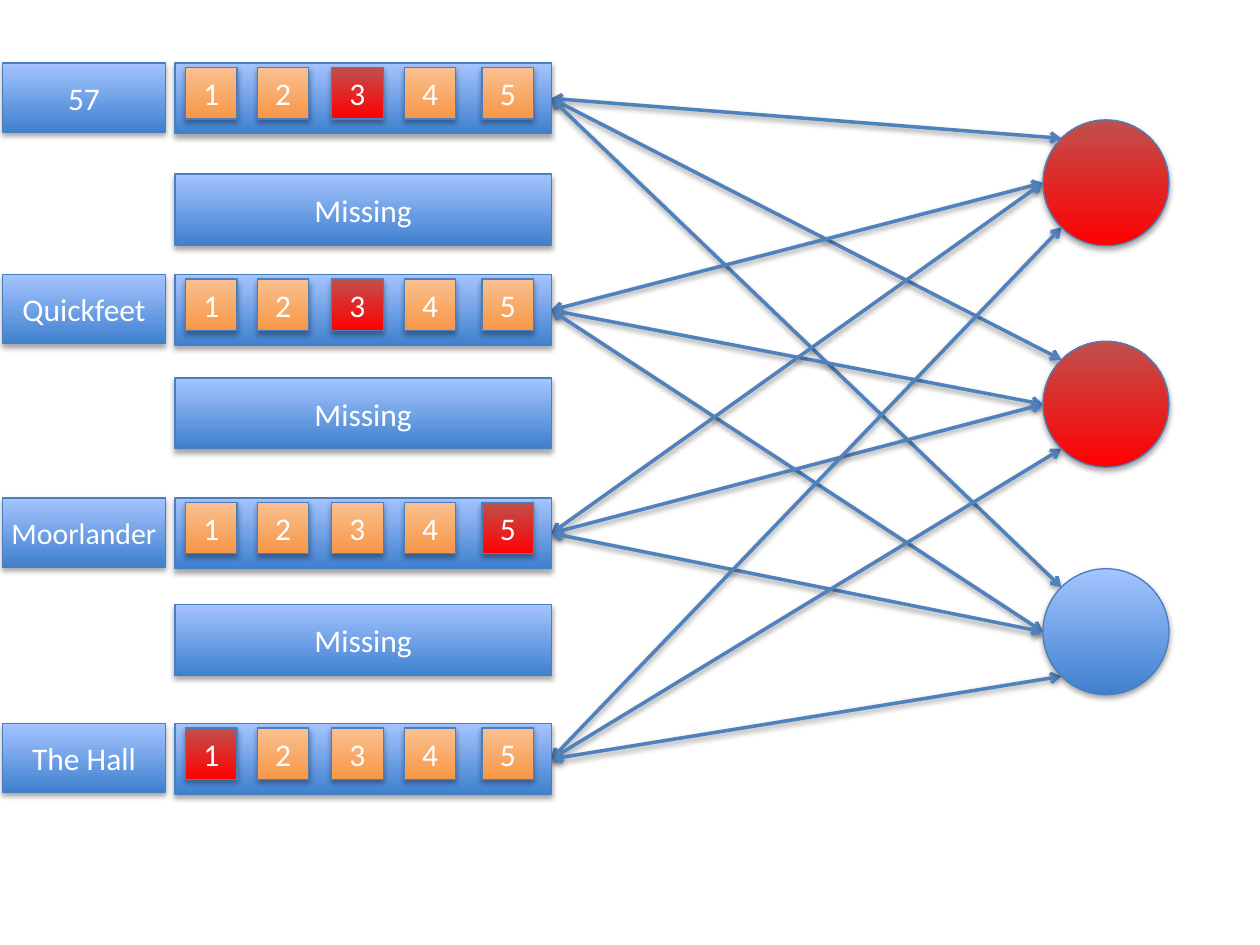
import math

import pptx
import pptx.dml.color
import pptx.enum.shapes
import pptx.enum.text
import pptx.oxml.ns
import pptx.util
from lxml import etree

Pt = pptx.util.Pt
KIND = pptx.enum.shapes.MSO_SHAPE
HEX = {"edge": "4B7EBC", "wire": "4F81BD", "text": "FFFFFF", "shade": "000000"}
FILLS = {
    "blue": ("3F80CE", "A4C4FF"),
    "orange": ("F79646", "FAC090"),
    "red": ("FF0000", "C0504D"),
}
FILMS = [
    ("57", 36, 3, 18),
    ("Quickfeet", 157, 3, 18),
    ("Moorlander", 284.5, 5, 17),
    ("The Hall", 413.5, 1, 18),
]
GAPS = [99.5, 216, 345.5]
NODES = [(68.5, "red"), (195, "red"), (325, "blue")]
TILES = [6, 47, 89.5, 131, 175.5]
ANGLES = [-45, 0, 0, 45]


def rgb(code):
    """Turn a hex string into a colour."""
    return pptx.dml.color.RGBColor.from_string(code)


def child(node, tag, **attrs):
    """Append a drawing element to a node."""
    return etree.SubElement(node, pptx.oxml.ns.qn("a:" + tag), attrs)


def shade(props, dist, alpha):
    """Give shape properties a soft shadow straight below."""
    glow = child(
        child(props, "effectLst"), "outerShdw", blurRad=str(Pt(3.15)),
        dist=str(Pt(dist)), dir="5400000", rotWithShape="0",
    )
    child(child(glow, "srgbClr", val=HEX["shade"]), "alpha", val=str(alpha * 1000))


def block(slide, box, tone, text="", size=18, kind=KIND.RECTANGLE):
    """Draw one shaded shape with optional centred text."""
    shape = slide.shapes.add_shape(kind, *map(Pt, box))
    shape.fill.gradient()
    shape.fill.gradient_angle = 90
    for stop, code in zip(shape.fill.gradient_stops, FILLS[tone]):
        stop.color.rgb = rgb(code)
    shape.line.color.rgb = rgb(HEX["edge"])
    shape.line.width = Pt(0.75)
    shade(shape.element.spPr, 1.8, 35)
    if text:
        frame = shape.text_frame
        frame.text = text
        frame.word_wrap = False
        frame.vertical_anchor = pptx.enum.text.MSO_ANCHOR.MIDDLE
        para = frame.paragraphs[0]
        para.alignment = pptx.enum.text.PP_ALIGN.CENTER
        font = para.runs[0].font
        font.name = "Calibri"
        font.size = Pt(size)
        font.color.rgb = rgb(HEX["text"])
    return shape


def rating(slide, box, pick):
    """Draw a bar of five scores with the picked one in red."""
    left, top = box[:2]
    bar = block(slide, box, "blue")
    for score, shift in enumerate(TILES, 1):
        tone = "red" if score == pick else "orange"
        block(slide, (left + shift, top + 2.5, 29.5, 29.5), tone, str(score))
    return bar


def wire(slide, bar, node, angle, depth):
    """Link a bar to a point on the left rim of a node, behind the shapes."""
    turn = math.radians(angle)
    half = node.width / 2
    x = round(node.left + half - half * math.cos(turn))
    y = round(node.top + half + half * math.sin(turn))
    line = slide.shapes.add_connector(
        pptx.enum.shapes.MSO_CONNECTOR.STRAIGHT, 0, 0, x, y
    )
    line.begin_connect(bar, 3)
    line.line.color.rgb = rgb(HEX["wire"])
    line.line.width = Pt(2)
    props = line.element.spPr
    stroke = props.find(pptx.oxml.ns.qn("a:ln"))
    child(stroke, "headEnd", type="arrow")
    child(stroke, "tailEnd", type="arrow")
    shade(props, 1.6, 38)
    line.element.getparent().insert(depth, line.element)


def network(slide, box):
    """Draw the films, their ratings, the hidden nodes and all links."""
    left, top = box[:2]
    bars = []
    for name, y, pick, size in FILMS:
        block(slide, (left + 1.5, top + y, 93, 39.5), "blue", name, size)
        bars.append(rating(slide, (left + 100, top + y, 215, 40.5), pick))
    for y in GAPS:
        block(slide, (left + 100, top + y, 215, 40.5), "blue", "Missing")
    nodes = [
        block(slide, (left + 596, top + y, 72, 72), tone, kind=KIND.OVAL)
        for y, tone in NODES
    ]
    depth = 2
    for bar, angle in zip(bars, ANGLES):
        for node in nodes:
            wire(slide, bar, node, angle, depth)
            depth += 1


def main():
    """Build and save the slide."""
    deck = pptx.Presentation()
    deck.slide_width, deck.slide_height = Pt(720), Pt(540)
    slide = deck.slides.add_slide(deck.slide_layouts[6])
    network(slide, (0, 0, 720, 540))
    deck.save("out.pptx")


if __name__ == "__main__":
    main()
